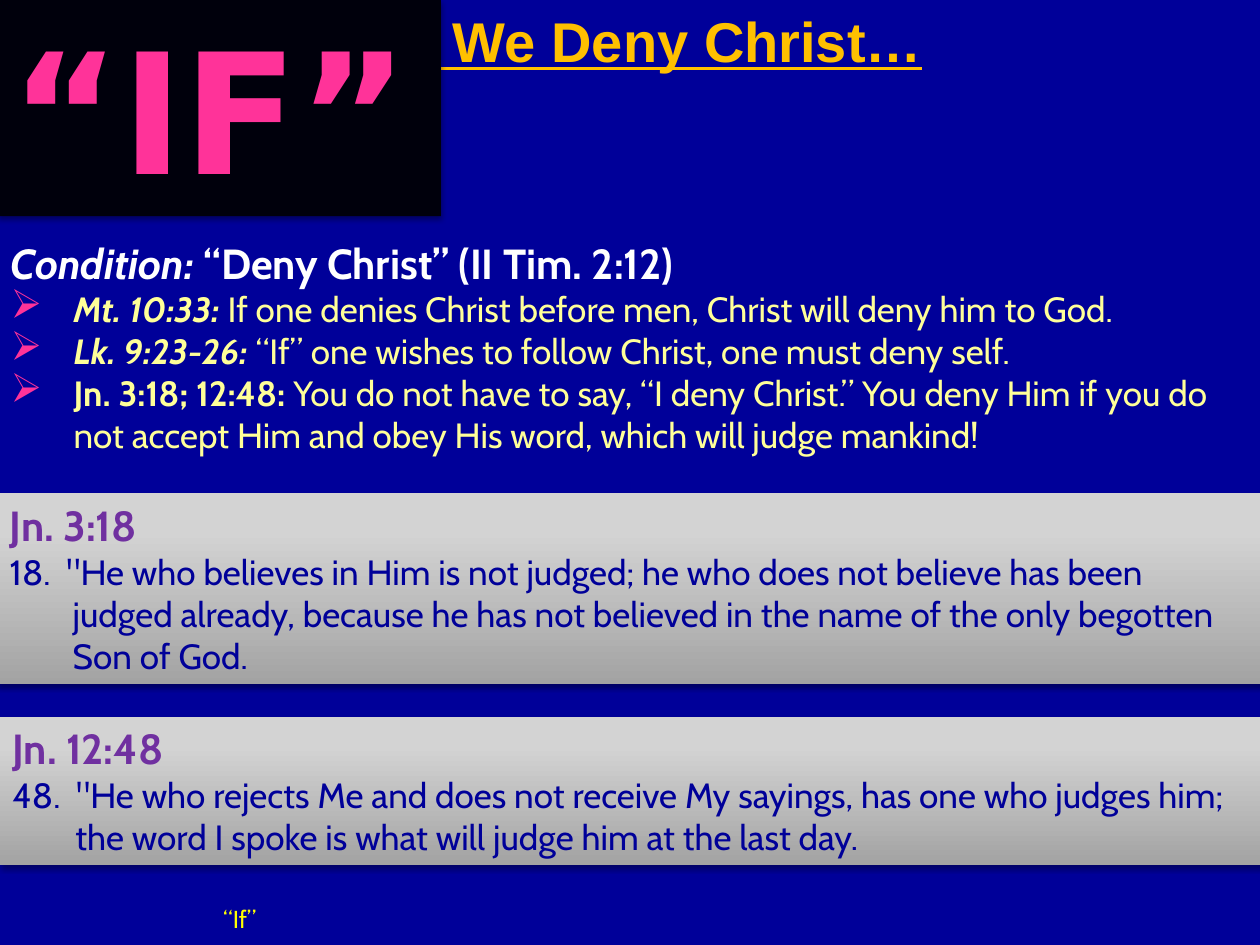
import copy

import pptx
import pptx.dml.color
import pptx.enum.shapes
import pptx.enum.text
import pptx.oxml
import pptx.oxml.ns
import pptx.util

Pt = pptx.util.Pt
RGB = pptx.dml.color.RGBColor
ALIGN = pptx.enum.text.PP_ALIGN
ANCHOR = pptx.enum.text.MSO_ANCHOR
qn = pptx.oxml.ns.qn
NS = pptx.oxml.ns.nsdecls("a")

NAVY = RGB(0x00, 0x00, 0x99)
BLACK = RGB(0x00, 0x00, 0x0C)
WHITE = RGB(0xFF, 0xFF, 0xFF)
GOLD = RGB(0xFF, 0xC0, 0x00)
YELLOW = RGB(0xFF, 0xFF, 0x00)
CREAM = RGB(0xFF, 0xFF, 0x99)
PINK = RGB(0xFF, 0x33, 0x99)
PURPLE = RGB(0x70, 0x30, 0xA0)
GREYS = [(0, RGB(0xA3, 0xA3, 0xA3)), (0.8, RGB(0xD3, 0xD3, 0xD3)), (1, RGB(0xD4, 0xD4, 0xD4))]
HANG = 36


def add_run(p, text, size=20, color=CREAM, font="Cabin", bold=False, italic=False, underline=False):
    r = p.add_run()
    r.text = text
    r.font.name = font
    r.font.size = Pt(size)
    r.font.color.rgb = color
    r.font.bold = bold
    r.font.italic = italic
    r.font.underline = underline


def add_para(tf, align=ALIGN.LEFT, hang=0, bullet=None):
    p = tf.paragraphs[0]
    if p.runs:
        p = tf.add_paragraph()
    p.alignment = align
    pPr = p._p.get_or_add_pPr()
    pPr.set("marL", str(Pt(hang)))
    pPr.set("indent", str(-Pt(hang)))
    if bullet:
        for xml in (f'<a:buClr {NS}><a:srgbClr val="{PINK}"/></a:buClr>',
                    f'<a:buSzPct {NS} val="115000"/>',
                    f'<a:buFont {NS} typeface="OpenSymbol"/>',
                    f'<a:buChar {NS} char="{bullet}"/>'):
            pPr.append(pptx.oxml.parse_xml(xml))
    return p


def frame(sp, anchor=ANCHOR.TOP):
    tf = sp.text_frame
    tf.word_wrap = True
    tf.auto_size = pptx.enum.text.MSO_AUTO_SIZE.NONE
    tf.vertical_anchor = anchor
    return tf


def add_box(s, x, y, w, h):
    return frame(s.shapes.add_textbox(Pt(x), Pt(y), Pt(w), Pt(h)))


def add_panel(s, x, y, w, h, color=None):
    sp = s.shapes.add_shape(pptx.enum.shapes.MSO_SHAPE.RECTANGLE, Pt(x), Pt(y), Pt(w), Pt(h))
    sp.line.fill.background()
    if color is not None:
        sp.fill.solid()
        sp.fill.fore_color.rgb = color
    else:
        sp.fill.gradient()
        sp.fill.gradient_angle = 90
        stops = sp._element.spPr.find(".//" + qn("a:gsLst"))
        stops.append(copy.deepcopy(stops[-1]))
        for stop, (position, grey) in zip(sp.fill.gradient_stops, GREYS):
            stop.position = position
            stop.color.rgb = grey
    sp.shadow.inherit = False
    sp._element.spPr.find(qn("a:effectLst")).append(pptx.oxml.parse_xml(
        f'<a:outerShdw {NS} blurRad="{Pt(3.1)}" dist="{Pt(1.8)}" '
        'dir="5400000" rotWithShape="0"><a:srgbClr val="000000">'
        '<a:alpha val="35000"/></a:srgbClr></a:outerShdw>'))
    return frame(sp)


def add_title(s):
    sp = s.shapes.title
    sp.left, sp.top, sp.width, sp.height = Pt(242.8), Pt(-1), Pt(352.6), Pt(48)
    p = add_para(frame(sp, ANCHOR.MIDDLE))
    add_run(p, " We Deny Christ…", size=32, color=GOLD, font="Arial", bold=True, underline=True)


def add_condition(s):
    tf = add_box(s, -1, 132, 720, 133)
    p = add_para(tf, hang=HANG)
    add_run(p, "Condition:", size=24, color=WHITE, bold=True, italic=True)
    add_run(p, " “Deny Christ” (II Tim. 2:12)", size=24, color=WHITE, bold=True)
    points = [
        ("Mt. 10:33: ", True, "If one denies Christ before men, Christ will deny him to God."),
        ("Lk. 9:23-26: ", True, "“If” one wishes to follow Christ, one must deny self."),
        ("Jn. 3:18; 12:48: ", False, "You do not have to say, “I deny Christ.” You deny Him "
         "if you do not accept Him and obey His word, which will judge mankind!"),
    ]
    for verse, italic, text in points:
        p = add_para(tf, hang=HANG, bullet="➢")
        add_run(p, verse, bold=True, italic=italic)
        add_run(p, text)


def add_passage(s, x, y, h, verse, text):
    tf = add_panel(s, x, y, 723, h)
    add_run(add_para(tf, hang=HANG), verse, size=24, color=PURPLE, bold=True)
    add_run(add_para(tf, hang=HANG), text, color=NAVY)


def main():
    prs = pptx.Presentation()
    prs.slide_width, prs.slide_height = Pt(720), Pt(540)
    s = prs.slides.add_slide(prs.slide_layouts[5])
    s.background.fill.solid()
    s.background.fill.fore_color.rgb = NAVY

    add_title(s)
    p = add_para(add_box(s, 1, 513, 272, 27), ALIGN.CENTER)
    add_run(p, "“If”", size=14, color=YELLOW)
    p = add_para(add_panel(s, -1, 0, 253, 123.5, BLACK))
    add_run(p, "“IF”", size=96, color=PINK, font="DejaVu Sans", bold=True)
    add_condition(s)
    add_passage(s, -1.5, 282, 109, "Jn. 3:18",
                "18.  \"He who believes in Him is not judged; he who does not believe has been judged "
                "already, because he has not believed in the name of the only begotten Son of God.")
    add_passage(s, 0, 409.5, 85, "Jn. 12:48",
                "48.  \"He who rejects Me and does not receive My sayings, has one who judges him; "
                "the word I spoke is what will judge him at the last day.")
    prs.save("out.pptx")


if __name__ == "__main__":
    main()
